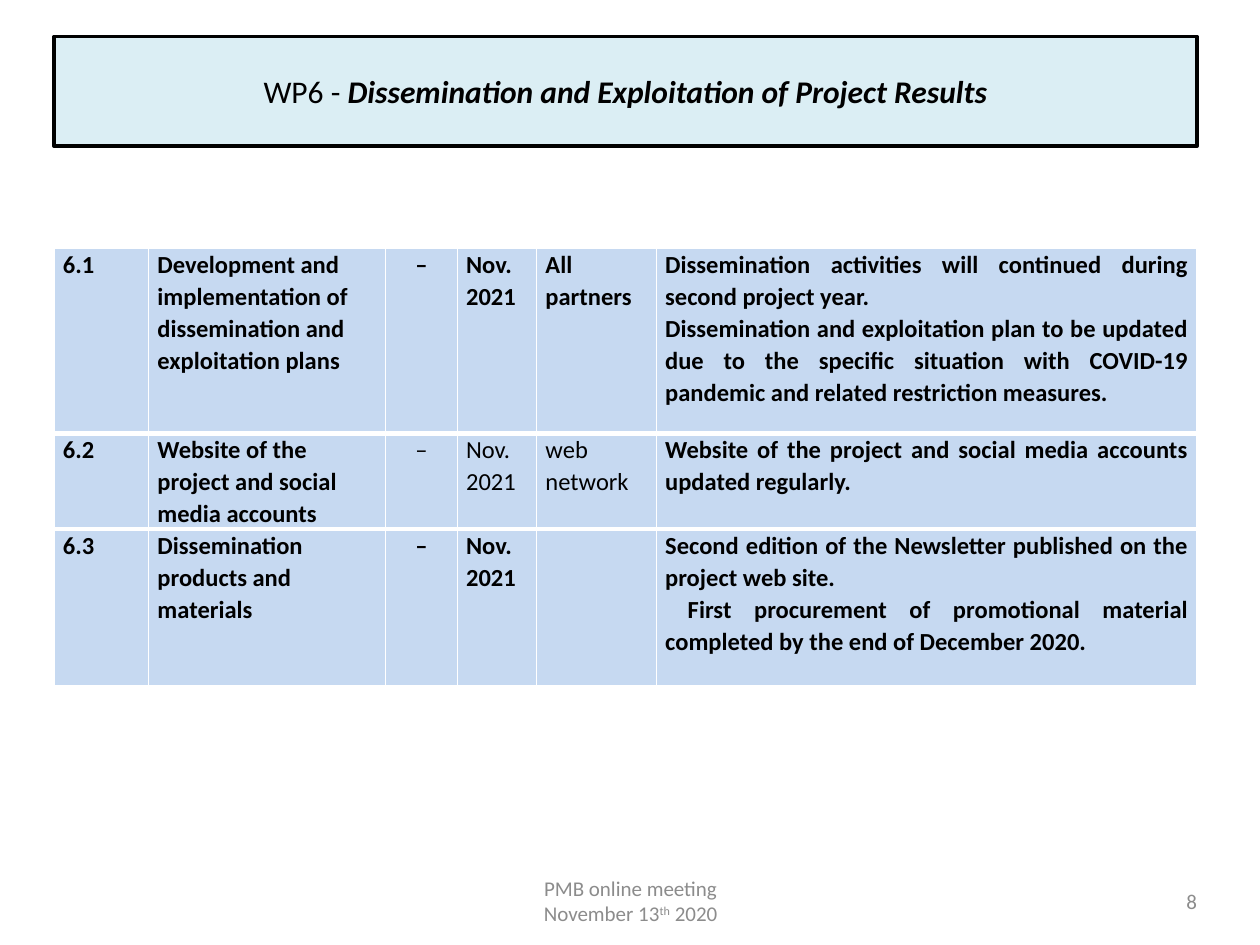
from lxml.etree import SubElement as Sub
from pptx import Presentation
from pptx.dml.color import RGBColor
from pptx.enum.text import MSO_ANCHOR as Anchor, MSO_AUTO_SIZE as Auto, PP_ALIGN as Align
from pptx.oxml.ns import qn
from pptx.util import Inches, Pt

COLS = [0.75, 1.88, 0.57, 0.63, 0.95, 4.29]
HIGH = [1.47, 0.75, 1.24]
ALIGNS = [Align.LEFT, Align.LEFT, Align.CENTER, Align.LEFT, Align.LEFT, Align.JUSTIFY]
PLAIN = {(1, 2), (1, 3), (1, 4)}
TASKS = [
    ["6.1", "Development and implementation of dissemination and exploitation plans",
     "–", "Nov. 2021", "All partners",
     ["Dissemination activities will continued during second project year.",
      "Dissemination and exploitation plan to be updated due to the specific situation "
      "with COVID-19 pandemic and related restriction measures."]],
    ["6.2", "Website of the project and social media accounts",
     "–", "Nov. 2021", "web network",
     "Website of the project and social media accounts updated regularly."],
    ["6.3", "Dissemination products and materials", "–", "Nov. 2021", "",
     ["Second edition of the Newsletter published on the project web site.",
      " First procurement of promotional material completed by the end of December 2020."]],
]


def color(code):
    """Turn a hex string into a colour."""
    return RGBColor.from_string(code)


def write(frame, text, size=12, ink="000000", align=Align.LEFT, bold=False, gap=None,
          anchor=None, inset=None):
    """Fill a frame with paragraphs, each a string or a list of (string, format) runs."""
    frame.word_wrap = True
    if anchor is not None:
        frame.vertical_anchor = anchor
    if inset:
        (frame.margin_left, frame.margin_top,
         frame.margin_right, frame.margin_bottom) = map(Inches, inset)
    for i, runs in enumerate([text] if isinstance(text, str) else text):
        para = frame.add_paragraph() if i else frame.paragraphs[0]
        para.alignment = align
        if gap:
            para.line_spacing = gap
        for words, form in [(runs, {})] if isinstance(runs, str) else runs:
            run = para.add_run()
            run.text = words
            font = run.font
            font.name, font.size = "Calibri", Pt(size)
            font.color.rgb = color(ink)
            font.bold = form.get("bold", bold)
            font.italic = form.get("italic", False)
            if "raised" in form:
                run._r.get_or_add_rPr().set("baseline", str(form["raised"] * 1000))


def head(slide):
    """Place and format the title."""
    title = slide.shapes.title
    title.left, title.top, title.width, title.height = map(Inches, (0.43, 0.29, 9.07, 0.87))
    title.fill.solid()
    title.fill.fore_color.rgb = color("DBEEF4")
    title.line.color.rgb = color("000000")
    title.line.width = Pt(2)
    title.text_frame.auto_size = Auto.NONE
    name = "Dissemination and Exploitation of Project Results"
    write(title.text_frame, [[("WP6 - ", {}), (name, {"bold": True, "italic": True})]],
          size=18, align=Align.CENTER, anchor=Anchor.MIDDLE)


def edge(cell, top, base):
    """Draw white borders round a cell."""
    props = cell._tc.get_or_add_tcPr()
    for tag, width in (("lnL", 1), ("lnR", 1), ("lnT", top), ("lnB", base)):
        line = Sub(props, qn(f"a:{tag}"), w=str(Pt(width)))
        Sub(Sub(line, qn("a:solidFill")), qn("a:srgbClr"), val="FFFFFF")


def grid(slide):
    """Add the table of tasks."""
    frame = slide.shapes.add_table(len(HIGH), len(COLS), Inches(0.43), Inches(1.97),
                                   Inches(9.07), Inches(sum(HIGH)))
    table = frame.table
    table.first_row = table.horz_banding = False
    for col, wide in zip(table.columns, COLS):
        col.width = Inches(wide)
    last = len(HIGH) - 1
    for r, (row, high) in enumerate(zip(table.rows, HIGH)):
        row.height = Inches(high)
        for c, cell in enumerate(row.cells):
            edge(cell, 3 if r else 1, 3 if r < last else 1)
            cell.fill.solid()
            cell.fill.fore_color.rgb = color("C6D9F1")
            cell.margin_left = cell.margin_right = Inches(0.07)
            cell.margin_top = cell.margin_bottom = 0
            if TASKS[r][c]:
                write(cell.text_frame, TASKS[r][c], size=14, align=ALIGNS[c],
                      bold=(r, c) not in PLAIN, gap=1.07)


def foot(slide, left, width, text, align, pad):
    """Add a grey text box at the foot of the slide."""
    box = slide.shapes.add_textbox(Inches(left), Inches(6.95), Inches(width), Inches(0.4))
    write(box.text_frame, text, ink="8C8C8C", align=align, anchor=Anchor.MIDDLE,
          inset=(pad, 0.05, 0, 0.05))


def main():
    """Build and save the slide."""
    deck = Presentation()
    deck.slide_width, deck.slide_height = Inches(10), Inches(7.5)
    slide = deck.slides.add_slide(deck.slide_layouts[5])
    head(slide)
    grid(slide)
    date = [("November 13", {}), ("th", {"raised": 30}), (" 2020", {})]
    foot(slide, 2.09, 5.83, ["PMB online meeting", date], Align.CENTER, 0)
    foot(slide, 7.99, 1.51, "8", Align.RIGHT, 0.1)
    deck.save("out.pptx")


if __name__ == "__main__":
    main()
